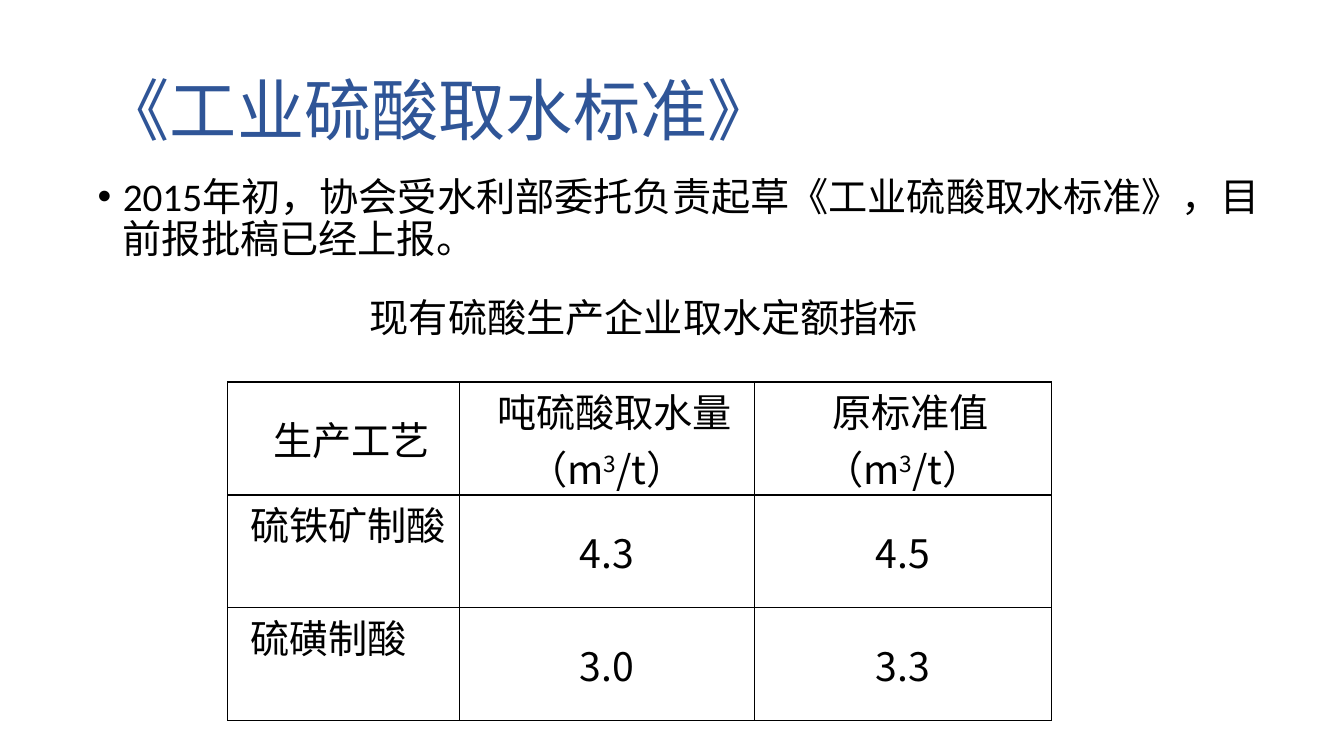
from lxml import etree
from pptx import Presentation
from pptx.dml.color import RGBColor
from pptx.enum.text import MSO_ANCHOR, PP_ALIGN
from pptx.oxml.ns import qn
from pptx.util import Inches, Pt

CENTER, LEFT = PP_ALIGN.CENTER, PP_ALIGN.LEFT
TOP, MIDDLE = MSO_ANCHOR.TOP, MSO_ANCHOR.MIDDLE
HAN_FONT = "Noto Sans CJK SC"
BLACK, BLUE = "000000", "2F5597"
COLUMN_WIDTHS = (2.3, 2.92, 2.95)
ROW_HEIGHT = 1.12
UNIT = (("3", True), ("/t）", False))
ROWS = (
    ((("生产工艺", False),),
     (("吨硫酸取水量（m", False), *UNIT),
     (("原标准值（m", False), *UNIT)),
    ((("硫铁矿制酸", False),), (("4.3", False),), (("4.5", False),)),
    ((("硫磺制酸", False),), (("3.0", False),), (("3.3", False),)),
)


def color(value):
    return RGBColor.from_string(value)


def add_span(para, text, size=28, font=HAN_FONT, ink=BLACK, raised=False):
    span = para.add_run()
    span.text = text
    span.font.size = Pt(size)
    span.font.name = font
    span.font.bold = False
    span.font.color.rgb = color(ink)
    properties = span.font._element
    etree.SubElement(properties, qn("a:ea")).set("typeface", HAN_FONT)
    if raised:
        properties.set("baseline", "30000")


def set_indent(para, margin, first_line):
    properties = para._p.get_or_add_pPr()
    properties.set("marL", str(Inches(margin)))
    properties.set("indent", str(Inches(first_line)))
    return properties


def add_text(page, place, text, size=28, font="Calibri", ink=BLACK,
             anchor=TOP, hanging=False, bullet=False):
    box = page.shapes.add_textbox(*(Inches(length) for length in place))
    frame = box.text_frame
    frame.word_wrap = True
    frame.vertical_anchor = anchor
    para = frame.paragraphs[0]
    para.line_spacing = 0.9
    if hanging:
        para.space_before = Pt(10)
        properties = set_indent(para, 0.25, -0.25)
        if bullet:
            etree.SubElement(properties, qn("a:buFont")).set("typeface", "Arial")
            etree.SubElement(properties, qn("a:buChar")).set("char", "•")
    add_span(para, text, size, font, ink)


def add_borders(cell):
    properties = cell._tc.get_or_add_tcPr()
    for position, side in enumerate(("lnL", "lnR", "lnT", "lnB")):
        line = etree.Element(qn("a:" + side), w=str(Pt(1)))
        fill = etree.SubElement(line, qn("a:solidFill"))
        etree.SubElement(fill, qn("a:srgbClr")).set("val", BLACK)
        properties.insert(position, line)


def fill_cell(cell, spans, is_label, is_header):
    cell.fill.background()
    cell.margin_left = cell.margin_right = Inches(0.07)
    cell.margin_top = cell.margin_bottom = 0
    row_label = is_label and not is_header
    cell.vertical_anchor = TOP if row_label else MIDDLE
    para = cell.text_frame.paragraphs[0]
    para.alignment = LEFT if row_label else CENTER
    if is_label or is_header:
        set_indent(para, 0, 0.15)
    for text, raised in spans:
        add_span(para, text, raised=raised)
    add_borders(cell)


def add_quota_table(page, left, top):
    frame = page.shapes.add_table(
        len(ROWS), len(COLUMN_WIDTHS), Inches(left), Inches(top),
        Inches(sum(COLUMN_WIDTHS)), Inches(ROW_HEIGHT * len(ROWS)))
    table = frame.table
    table.first_row = table.horz_banding = False
    for column, width in zip(table.columns, COLUMN_WIDTHS):
        column.width = Inches(width)
    for r, row in enumerate(ROWS):
        table.rows[r].height = Inches(ROW_HEIGHT)
        for c, spans in enumerate(row):
            fill_cell(table.cell(r, c), spans, c == 0, r == 0)


def main():
    deck = Presentation()
    deck.slide_width, deck.slide_height = Inches(13.33), Inches(7.5)
    page = deck.slides.add_slide(deck.slide_layouts[6])
    add_text(page, (0.92, 0.4, 11.76, 1.45), "《工业硫酸取水标准》",
             size=48, ink=BLUE, anchor=MIDDLE)
    add_text(page, (0.87, 1.71, 11.96, 1.18),
             "2015年初，协会受水利部委托负责起草《工业硫酸取水标准》，目前报批稿已经上报。",
             hanging=True, bullet=True)
    add_quota_table(page, 2.26, 3.79)
    add_text(page, (3.57, 2.91, 6.27, 1.18), "现有硫酸生产企业取水定额指标",
             font="Arial", hanging=True)
    deck.save("out.pptx")


if __name__ == "__main__":
    main()
